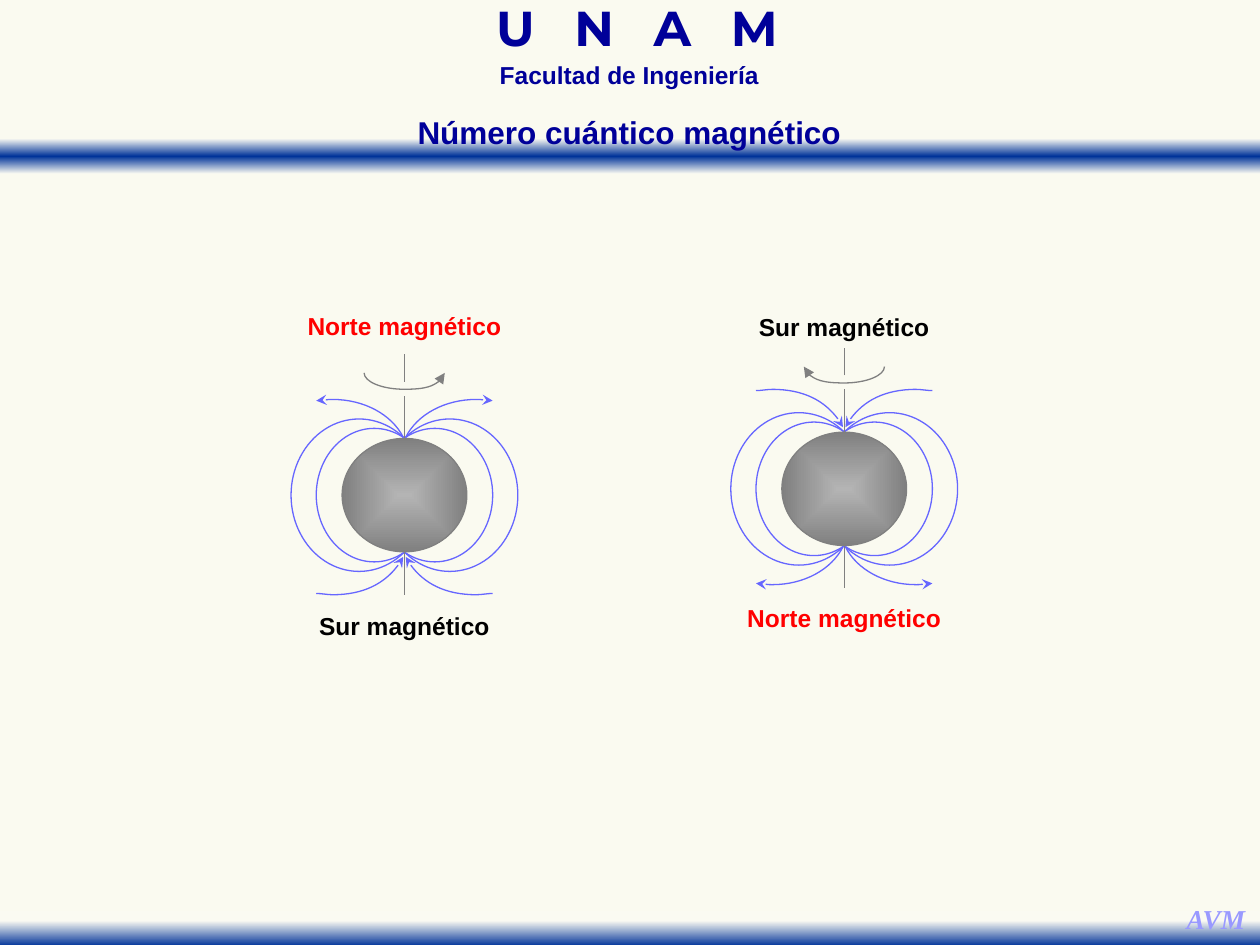
import copy

import lxml.etree
import pptx
import pptx.dml.color
import pptx.enum.shapes
import pptx.enum.text
import pptx.oxml
import pptx.oxml.ns
import pptx.util

Inches = pptx.util.Inches
qn = pptx.oxml.ns.qn
COLORS = {
    "paper": "FAFAF0", "fade": "FAFAF2", "band": "003399", "heading": "000099",
    "initials": "9999FF", "field": "6666FF", "gray": "808080", "shine": "B4B4B4",
    "north": "FF0000", "south": "000000",
}
BEND = [(0, 0), (0.09, 0.18), (0.31, 0.3), (0.56, 0.3),
        (0.6, 0.3), (0.65, 0.29), (0.69, 0.29), (0.56, -0.19)]
SPIN = [(0.32, 0), (0.32, 0.07), (0.18, 0.13), (0, 0.13),
        (-0.18, 0.13), (-0.32, 0.07), (-0.32, 0), (0, 0)]


def rgb(name):
    return pptx.dml.color.RGBColor.from_string(COLORS[name])


def format_text(box, text, size=14, font="Arial", color="heading", italic=False,
                line_spacing=1.0, tracking=None, wrap=True):
    frame = box.text_frame
    frame.word_wrap = wrap
    frame.auto_size = pptx.enum.text.MSO_AUTO_SIZE.SHAPE_TO_FIT_TEXT
    frame.vertical_anchor = pptx.enum.text.MSO_ANCHOR.TOP
    para = frame.paragraphs[0]
    para.alignment = pptx.enum.text.PP_ALIGN.CENTER
    para.line_spacing = line_spacing
    para.space_before = pptx.util.Pt(0)
    span = para.add_run()
    span.text = text
    span.font.size = pptx.util.Pt(size)
    span.font.name = font
    span.font.bold = True
    span.font.italic = italic
    span.font.color.rgb = rgb(color)
    if tracking:
        span.font._element.set("spc", str(tracking))


def add_text(shapes, bounds, text, **style):
    box = shapes.add_textbox(*map(Inches, bounds))
    format_text(box, text, **style)


def set_gradient(shape, stops, radial=False):
    shape.fill.background()
    gradient = lxml.etree.Element(qn("a:gradFill"), rotWithShape="1")
    stop_list = lxml.etree.SubElement(gradient, qn("a:gsLst"))
    for position, color in stops:
        stop = lxml.etree.SubElement(stop_list, qn("a:gs"), pos=str(position * 1000))
        lxml.etree.SubElement(stop, qn("a:srgbClr"), val=COLORS[color])
    if radial:
        focus = lxml.etree.SubElement(gradient, qn("a:path"))
        focus.set("path", "shape")
        lxml.etree.SubElement(focus, qn("a:fillToRect"),
                              l="50000", t="50000", r="50000", b="50000")
    else:
        lxml.etree.SubElement(gradient, qn("a:lin"), ang="5400000", scaled="1")
    properties = shape._element.spPr
    properties.replace(properties.find(qn("a:noFill")), gradient)


def set_line(shape, color):
    shape.line.color.rgb = rgb(color)
    shape.line.width = pptx.util.Pt(0.75)


def add_band(shapes, top, stops):
    band = shapes.add_shape(pptx.enum.shapes.MSO_SHAPE.RECTANGLE,
                            Inches(0), Inches(top), Inches(10), Inches(0.28))
    band.shadow.inherit = False
    set_gradient(band, stops)
    band.line.fill.background()


def add_ellipse(shapes, center, size, color):
    left, top = (middle - side / 2 for middle, side in zip(center, size))
    ellipse = shapes.add_shape(pptx.enum.shapes.MSO_SHAPE.OVAL,
                               *map(Inches, (left, top, *size)))
    ellipse.shadow.inherit = False
    ellipse.fill.background()
    set_line(ellipse, color)
    return ellipse


def add_axis(shapes, x, start, end):
    axis = shapes.add_connector(pptx.enum.shapes.MSO_CONNECTOR.STRAIGHT,
                                *map(Inches, (x, start, x, end)))
    set_line(axis, "gray")
    lxml.etree.SubElement(axis._element.spPr, qn("a:effectLst"))


def add_curve(shapes, origin, points, flip, color, arrow_end, arrow):
    placed = [(Inches(origin[0] + flip[0] * x), Inches(origin[1] + flip[1] * y))
              for x, y in points]
    builder = shapes.build_freeform(*placed[0])
    builder.add_line_segments(placed[1:], close=True)
    curve = builder.convert_to_shape()
    curve.shadow.inherit = False
    curve.fill.background()
    set_line(curve, color)
    area = next(curve._element.iter(qn("a:path")))
    segments = area.findall(qn("a:lnTo"))
    for first in (0, 3):
        bezier = lxml.etree.Element(qn("a:cubicBezTo"))
        segments[first].addprevious(bezier)
        for segment in segments[first:first + 3]:
            bezier.append(segment[0])
            area.remove(segment)
    stroke = copy.deepcopy(area)
    for closing in stroke[-2:]:
        stroke.remove(closing)
    stroke.set("fill", "none")
    area.addprevious(stroke)
    area.set("stroke", "0")
    lxml.etree.SubElement(curve.line._get_or_add_ln(), qn(f"a:{arrow_end}"), type=arrow)


def add_magnet(slide, center, field_poles, spin_flip, north_up, label_tops):
    shapes = slide.shapes.add_group_shape().shapes
    x, y = center
    for offset, size in ((0.36, (1.08, 1.21)), (0.24, (0.92, 1.06))):
        for side in (1, -1):
            add_ellipse(shapes, (x + side * offset, y), size, "field")
    sphere = add_ellipse(shapes, center, (0.99, 0.9), "gray")
    set_gradient(sphere, [(0, "shine"), (100, "gray")], radial=True)
    for start, end in ((0.44, 0.79), (-0.45, -0.79), (-0.9, -1.12)):
        add_axis(shapes, x, y + start, y + end)
    add_curve(shapes, (x, y - 0.97), SPIN, (spin_flip, 1), "gray", "headEnd", "triangle")
    for pole, vertical, outward in zip(field_poles, (-1, 1), (north_up, not north_up)):
        for side in (-1, 1):
            add_curve(shapes, (x + side * 0.01, pole), BEND, (side, vertical), "field",
                      "tailEnd" if outward else "headEnd", "stealth")
    for top, north in zip(label_tops, (north_up, not north_up)):
        width = 1.74 if north else 1.56
        add_text(shapes, (x - width / 2, top, width, 0.33),
                 "Norte magnético" if north else "Sur magnético",
                 color="north" if north else "south", wrap=False)


def main():
    deck = pptx.Presentation()
    deck.slide_width, deck.slide_height = Inches(10), Inches(7.5)
    page = deck.slides.add_slide(deck.slide_layouts[5])
    page.background.fill.solid()
    page.background.fill.fore_color.rgb = rgb("paper")
    shapes = page.shapes
    add_band(shapes, 1.1, [(0, "fade"), (50, "band"), (100, "fade")])
    add_text(shapes, (3.1, 0.06, 3.91, 0.43), "U N A M", size=28, font="Montserrat",
             line_spacing=0.7, tracking=740)
    add_text(shapes, (3.21, 0.49, 3.57, 0.27), "Facultad de Ingeniería", line_spacing=0.7)
    add_band(shapes, 7.23, [(28, "fade"), (100, "band")])
    add_text(shapes, (9.31, 7.18, 0.68, 0.37), "AVM", size=15.6, font="Times New Roman",
             color="initials", italic=True, line_spacing=0.7, wrap=False)
    add_magnet(page, (3.21, 3.93), (3.47, 4.42), 1, True, (2.42, 4.8))
    add_magnet(page, (6.7, 3.88), (3.39, 4.34), -1, False, (2.43, 4.74))
    title = shapes.title
    title.left, title.top, title.width, title.height = map(Inches, (2.83, 0.93, 4.33, 0.32))
    format_text(title, "Número cuántico magnético", size=18, line_spacing=0.7)
    shapes._spTree.append(title._element)
    deck.save("out.pptx")


if __name__ == "__main__":
    main()
